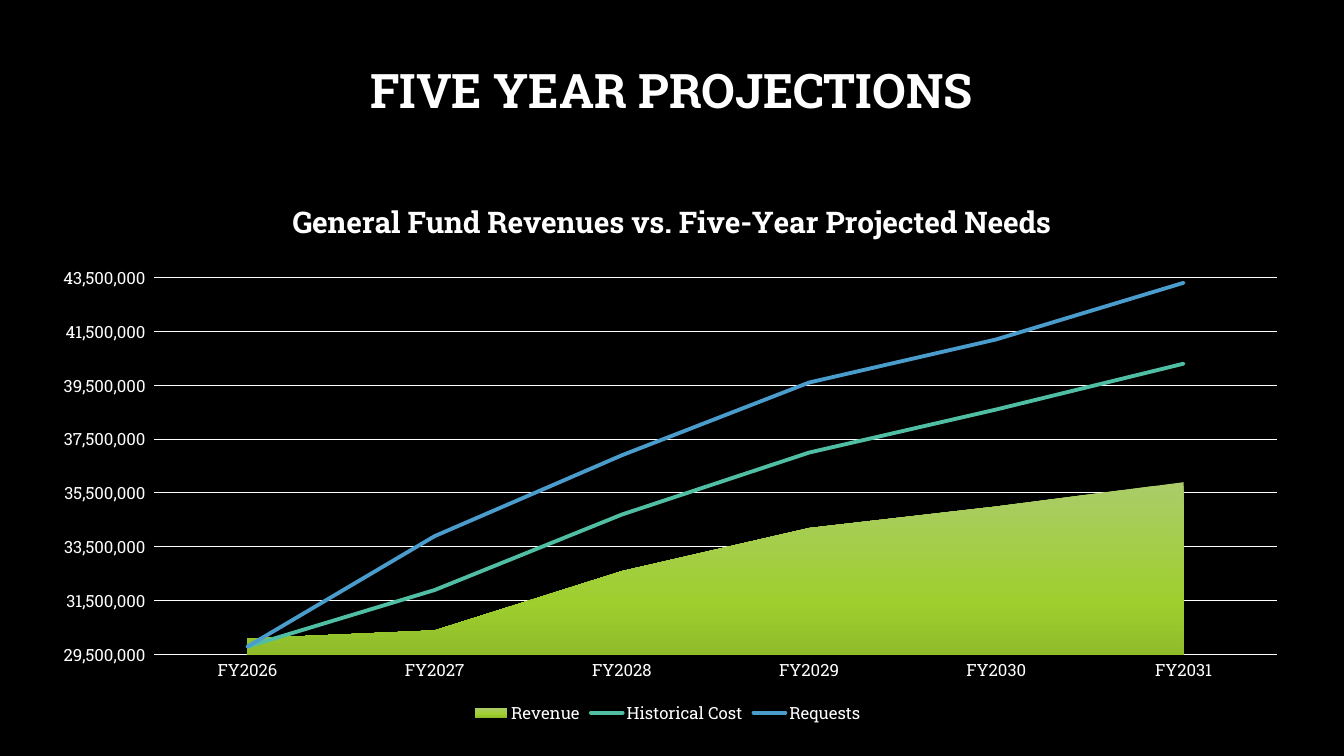
from pptx import Presentation
from pptx.chart.data import CategoryChartData
from pptx.dml.color import RGBColor
from pptx.enum.chart import (XL_CHART_TYPE, XL_LEGEND_POSITION,
                             XL_MARKER_STYLE, XL_TICK_MARK)
from pptx.enum.text import MSO_ANCHOR, PP_ALIGN
from pptx.oxml import parse_xml
from pptx.oxml.ns import nsdecls, qn
from pptx.util import Inches, Pt

# Content
TITLE = "FIVE YEAR PROJECTIONS"
HEAD = "General Fund Revenues vs. Five-Year Projected Needs"
YEARS = [f"FY{year}" for year in range(2026, 2032)]
MILLION = 1_000_000
SERIES = {  # millions
    "Revenue": (30.1, 30.4, 32.6, 34.2, 35.0, 35.9),
    "Historical Cost": (29.8, 31.9, 34.7, 37.0, 38.6, 40.3),
    "Requests": (29.8, 33.9, 36.9, 39.6, 41.2, 43.3),
}

# Style
FONT = "Roboto Slab"
BLACK = RGBColor(0x00, 0x00, 0x00)
WHITE = RGBColor(0xFF, 0xFF, 0xFF)
TEAL = RGBColor(0x50, 0xBE, 0xA3)
BLUE = RGBColor(0x4A, 0x9C, 0xCC)
GREENS = [(0, RGBColor(0xAB, 0xCC, 0x69)),
          (69, RGBColor(0x9E, 0xCF, 0x2E)),
          (100, RGBColor(0x90, 0xBC, 0x2A))]
NUMBER = r'_(* #,##0_);_(* \(#,##0\);_(* "-"_);_(@_)'
SCALE = {"minimum_scale": 29.5 * MILLION, "maximum_scale": 44.5 * MILLION,
         "major_unit": 2 * MILLION, "has_major_gridlines": True}

# Places: slide in inches, chart parts as shares of the chart
WIDE, HIGH = 13.33, 7.5
TITLE_BOX = (1, 0.2, 11.32, 1.45)
CHART_BOX = (0.33, 1.65, 12.59, 5.57)
HEAD_AT = {"x": 0.2, "y": 0.05}
PLOT_AT = {"x": 0.095, "y": 0.15, "w": 0.885, "h": 0.72}


def style(font, size, bold=False):
    for name, value in {"name": FONT, "size": Pt(size), "bold": bold}.items():
        setattr(font, name, value)
    font.color.rgb = WHITE


def stroke(line, color, width):
    line.color.rgb = color
    line.width = Pt(width)


def layout(shares, inner=False):
    target = '<c:layoutTarget val="inner"/>' if inner else ""
    modes = "".join(f'<c:{key}Mode val="edge"/>' for key in "xy")
    sizes = "".join(f'<c:{key} val="{val}"/>' for key, val in shares.items())
    return parse_xml(f'<c:layout {nsdecls("c")}><c:manualLayout>{target}{modes}'
                     f'{sizes}</c:manualLayout></c:layout>')


def place(parent, shares, after=None, inner=False):
    for old in parent.findall(qn("c:layout")):
        parent.remove(old)
    new = layout(shares, inner)
    if after is None:
        parent.insert(0, new)
    else:
        parent.find(qn(after)).addnext(new)


# Slide and title
deck = Presentation()
deck.slide_width, deck.slide_height = Inches(WIDE), Inches(HIGH)
slide = deck.slides.add_slide(deck.slide_layouts[6])
slide.background.fill.solid()
slide.background.fill.fore_color.rgb = BLACK

frame = slide.shapes.add_textbox(*map(Inches, TITLE_BOX)).text_frame
frame.word_wrap = True
frame.vertical_anchor = MSO_ANCHOR.MIDDLE
para = frame.paragraphs[0]
para.alignment, para.line_spacing = PP_ALIGN.CENTER, 0.9
run = para.add_run()
run.text = TITLE
style(run.font, 34, True)

# Chart
data = CategoryChartData()
data.categories = YEARS
for name, values in SERIES.items():
    data.add_series(name, [round(value * MILLION) for value in values])
chart = slide.shapes.add_chart(XL_CHART_TYPE.AREA_STACKED,
                               *map(Inches, CHART_BOX), data).chart
style(chart.font, 10)

chart.has_title = True
para = chart.chart_title.text_frame.paragraphs[0]
run = para.add_run()
run.text = HEAD
style(run.font, 21.3, True)
place(chart.chart_title._element, HEAD_AT, "c:tx")

chart.has_legend = True
chart.legend.position = XL_LEGEND_POSITION.BOTTOM
chart.legend.include_in_layout = False
style(chart.legend.font, 12)

# Axes
years, money = chart.category_axis, chart.value_axis
for axis in (years, money):
    axis.major_tick_mark = axis.minor_tick_mark = XL_TICK_MARK.NONE
    style(axis.tick_labels.font, 12)
for name, value in SCALE.items():
    setattr(money, name, value)
money.tick_labels.number_format = NUMBER
money.tick_labels.number_format_is_linked = False
money.format.line.fill.background()
stroke(money.major_gridlines.format.line, WHITE, 0.75)
years.has_major_gridlines = False
stroke(years.format.line, WHITE, 1)
money._element.find(qn("c:crossBetween")).set("val", "between")

# Lines share the axes of the area
area = chart.plots[0]
area.vary_by_categories = False
body = area._element
lines = parse_xml(f'<c:lineChart {nsdecls("c")}><c:grouping val="standard"/>'
                  '<c:varyColors val="0"/><c:marker val="1"/></c:lineChart>')
mark = lines.find(qn("c:marker"))
for item in body.findall(qn("c:ser"))[1:]:
    mark.addprevious(item)
for axis in body.findall(qn("c:axId")):
    lines.append(parse_xml(f'<c:axId {nsdecls("c")} val="{axis.get("val")}"/>'))
body.addnext(lines)
place(body.getparent(), PLOT_AT, inner=True)

# Series colours
fill = area.series[0].format.fill
fill.gradient()
fill.gradient_angle = 270
stops = next(area.series[0]._element.iter(qn("a:gsLst")))
for old in list(stops):
    stops.remove(old)
for share, color in GREENS:
    stops.append(parse_xml(f'<a:gs {nsdecls("a")} pos="{share * 1000}">'
                           f'<a:srgbClr val="{color}"/></a:gs>'))
for series, color in zip(chart.plots[1].series, (TEAL, BLUE)):
    stroke(series.format.line, color, 2.75)
    next(series._element.iter(qn("a:ln"))).set("cap", "rnd")
    series.marker.style = XL_MARKER_STYLE.NONE
    series.smooth = False

deck.save("out.pptx")
